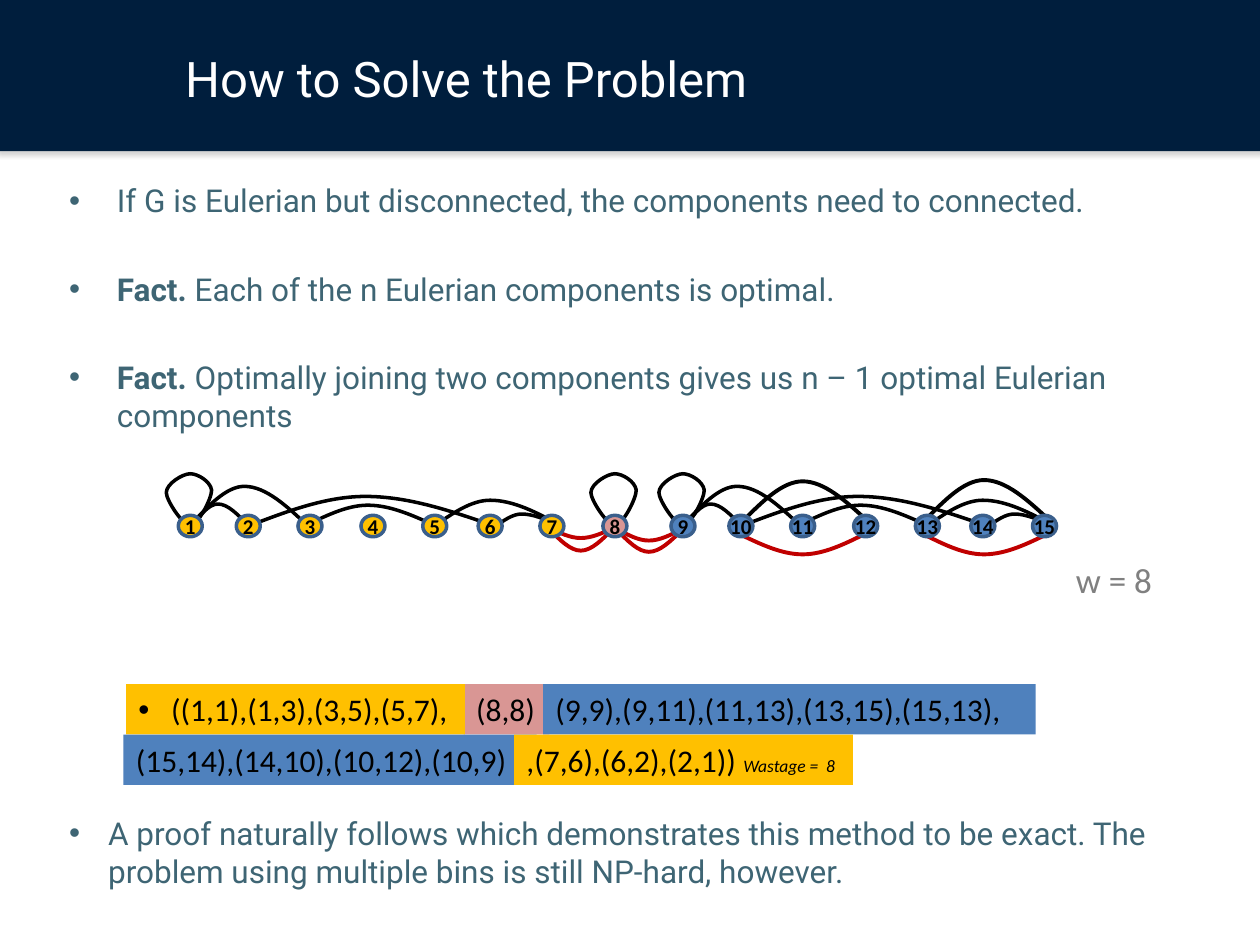
from lxml import etree
from pptx import Presentation
from pptx.dml.color import RGBColor
from pptx.enum.shapes import MSO_SHAPE
from pptx.enum.text import MSO_ANCHOR, PP_ALIGN
from pptx.oxml import parse_xml
from pptx.oxml.ns import nsdecls, qn
from pptx.util import Inches, Pt

RECTANGLE, ELLIPSE = MSO_SHAPE.RECTANGLE, MSO_SHAPE.OVAL
TOP, MIDDLE = MSO_ANCHOR.TOP, MSO_ANCHOR.MIDDLE
LEFT, CENTER = PP_ALIGN.LEFT, PP_ALIGN.CENTER

NAVY = RGBColor(0x00, 0x1E, 0x3D)
TEAL = RGBColor(0x3E, 0x65, 0x74)
GRAY = RGBColor(0x80, 0x80, 0x80)
WHITE = RGBColor(0xFF, 0xFF, 0xFF)
BLACK = RGBColor(0x00, 0x00, 0x00)
RED = RGBColor(0xC0, 0x00, 0x00)
YELLOW = RGBColor(0xFF, 0xC0, 0x00)
PINK = RGBColor(0xD9, 0x96, 0x94)
BLUE = RGBColor(0x4F, 0x81, 0xBD)
NODE_LINE = RGBColor(0x3A, 0x5F, 0x8C)

NODE_TOP = 4.09
NODE_SIZE = (0.19, 0.17)
COMPONENT_SHIFT = 3.91  # from nodes 1-7 to nodes 9-15
NODE_X = [1.51, 1.97, 2.46, 2.96, 3.45, 3.89, 4.38]
NODE_8_X = 4.88

# start x, start y, peak x, peak y, end x, end y
COMPONENT_ARCS = [
    (1.51, 4.19, 1.73, 4.00, 1.97, 4.17),
    (1.51, 4.17, 1.94, 3.86, 2.45, 4.18),
    (1.96, 4.18, 2.90, 3.94, 3.94, 4.18),
    (2.45, 4.16, 2.92, 4.01, 3.45, 4.17),
    (3.44, 4.18, 3.89, 3.97, 4.45, 4.17),
    (3.93, 4.18, 4.14, 4.08, 4.43, 4.17),
]
RIGHT_ARCS = [
    (5.89, 4.14, 6.37, 3.82, 6.88, 4.13),
    (7.34, 4.13, 7.81, 3.81, 8.33, 4.13),
]
RED_ARCS = [
    (4.90, 4.20, 5.15, 4.29, 5.41, 4.20),
    (4.90, 4.21, 5.15, 4.38, 5.41, 4.21),
    (4.36, 4.20, 4.61, 4.37, 4.87, 4.19),
    (4.36, 4.19, 4.61, 4.27, 4.87, 4.19),
    (5.87, 4.24, 6.37, 4.40, 6.88, 4.23),
    (7.31, 4.23, 7.81, 4.40, 8.33, 4.23),
]
# Bezier segments of a self-loop, relative to its lowest point
LOOP = [
    [(-0.06, 0), (-0.19, -0.20), (-0.19, -0.26)],
    [(-0.19, -0.33), (-0.06, -0.41), (0, -0.41)],
    [(0.06, -0.41), (0.16, -0.35), (0.17, -0.28)],
    [(0.17, -0.21), (0.06, 0), (0, 0)],
]
FACTS = [
    [("If G is Eulerian but disconnected, the components need to connected.", False)],
    [("Fact. ", True), ("Each of the n Eulerian components is optimal.", False)],
    [("Fact. ", True),
     ("Optimally joining two components gives us n – 1 optimal Eulerian components", False)],
]
PROOF = ("A proof naturally follows which demonstrates this method to be exact. "
         "The problem using multiple bins is still NP-hard, however.")


def add_curve(slide, start, segments, color, width, close=False):
    """Lay lines through the anchors, then turn each line into a Bezier segment."""
    anchors = [(Inches(x), Inches(y)) for x, y in [start] + [s[-1] for s in segments]]
    builder = slide.shapes.build_freeform(*anchors[0])
    builder.add_line_segments(anchors[1:], close=close)
    curve = builder.convert_to_shape()
    lines = list(curve._element.iter(qn("a:lnTo")))
    for line, segment in zip(lines, segments):
        bezier = etree.Element(qn("a:cubicBezTo"))
        for x, y in segment:
            point = etree.SubElement(bezier, qn("a:pt"))
            point.set("x", str(Inches(x) - curve.left))
            point.set("y", str(Inches(y) - curve.top))
        line.getparent().replace(line, bezier)
    curve.shadow.inherit = False
    curve.fill.background()
    curve.line.color.rgb = color
    curve.line.width = Pt(width)


def add_arc(slide, arc, color, width, shift=0):
    """Two Bezier halves that meet flat at the peak."""
    x1, y1, middle, peak, x2, y2 = arc
    x1, middle, x2 = x1 + shift, middle + shift, x2 + shift
    rise, fall = (middle - x1) / 3, (x2 - middle) / 3
    add_curve(slide, (x1, y1), [
        [(x1 + rise, (y1 + peak) / 2), (middle - rise, peak), (middle, peak)],
        [(middle + fall, peak), (x2 - fall, (y2 + peak) / 2), (x2, y2)],
    ], color, width)


def add_loop(slide, x):
    bottom = 4.17
    segments = [[(x + dx, bottom + dy) for dx, dy in segment] for segment in LOOP]
    add_curve(slide, (x, bottom), segments, BLACK, 2, close=True)


def add_filled(slide, kind, box, fill):
    shape = slide.shapes.add_shape(kind, *map(Inches, box))
    shape.shadow.inherit = False
    shape.fill.solid()
    shape.fill.fore_color.rgb = fill
    shape.line.fill.background()
    return shape


def set_font(font, name, size, color, bold=None):
    font.name, font.size, font.bold = name, Pt(size), bold
    font.color.rgb = color


def set_bullet(paragraph, indent):
    properties = paragraph._p.get_or_add_pPr()
    properties.set("marL", str(Inches(indent)))
    properties.set("indent", str(-Inches(indent)))
    etree.SubElement(properties, qn("a:buFont")).set("typeface", "Arial")
    etree.SubElement(properties, qn("a:buChar")).set("char", "•")


def add_text(slide, box):
    frame = slide.shapes.add_textbox(*map(Inches, box)).text_frame
    frame.word_wrap = True
    return frame


def add_node(slide, number, x, fill):
    width, height = NODE_SIZE
    node = add_filled(slide, ELLIPSE, (x - width / 2, NODE_TOP, width, height), fill)
    node.line.color.rgb = NODE_LINE
    node.line.width = Pt(2)
    frame = node.text_frame
    frame.margin_left = frame.margin_right = 0
    frame.word_wrap = False
    frame.vertical_anchor = MIDDLE
    paragraph = frame.paragraphs[0]
    paragraph.text = str(number)
    paragraph.alignment = CENTER
    set_font(paragraph.font, "Calibri", 12, BLACK, True)


def add_tour_part(slide, box, fill, text):
    frame = add_filled(slide, RECTANGLE, box, fill).text_frame
    frame.margin_right = 0
    frame.vertical_anchor = TOP
    paragraph = frame.paragraphs[0]
    paragraph.alignment = LEFT
    paragraph.add_run().text = text
    return paragraph


def add_header(slide):
    band = add_filled(slide, RECTANGLE, (-0.03, -0.01, 10.09, 1.21), NAVY)
    effects = band._element.spPr.find(qn("a:effectLst"))
    effects.append(parse_xml(
        f'<a:outerShdw {nsdecls("a")} blurRad="{Pt(3.1)}" dist="{Pt(1.8)}" dir="5400000">'
        '<a:srgbClr val="808080"><a:alpha val="35000"/></a:srgbClr></a:outerShdw>'))
    slide.shapes._spTree.insert(2, band._element)  # behind the title
    title = slide.shapes.title
    title.left, title.top, title.width, title.height = map(Inches, (1.37, 0, 7.07, 1.23))
    title.text_frame.text = "How to Solve the Problem"
    title.text_frame.vertical_anchor = MIDDLE
    paragraph = title.text_frame.paragraphs[0]
    paragraph.alignment = LEFT
    set_font(paragraph.font, "Roboto", 28, WHITE)


def add_facts(slide):
    frame = add_text(slide, (0.45, 1.39, 8.73, 5.43))
    for index, runs in enumerate(FACTS):
        paragraph = frame.add_paragraph() if index else frame.paragraphs[0]
        if index:
            paragraph.space_before = Pt(28.8)
        set_bullet(paragraph, 0.38)
        set_font(paragraph.font, "Roboto", 18, TEAL)
        for text, bold in runs:
            run = paragraph.add_run()
            run.text, run.font.bold = text, bold


def add_graph(slide):
    for arc in RED_ARCS:
        add_arc(slide, arc, RED, 2.25)
    for arc in RIGHT_ARCS:
        add_arc(slide, arc, BLACK, 2.25)
    for first, shift, fill in ((9, COMPONENT_SHIFT, BLUE), (1, 0, YELLOW)):
        add_loop(slide, NODE_X[0] + shift)
        for arc in COMPONENT_ARCS:
            add_arc(slide, arc, BLACK, 2, shift)
        for number, x in enumerate(NODE_X, first):
            add_node(slide, number, x + shift, fill)
    add_loop(slide, NODE_8_X)
    add_node(slide, 8, NODE_8_X, PINK)


def add_tour(slide):
    row_1, row_2, height = 5.43, 5.83, 0.4
    parts = [add_tour_part(slide, (left, top, width, height), fill, text)
             for left, top, width, fill, text in (
                 (3.68, row_1, 0.68, PINK, "(8,8)"),
                 (4.31, row_1, 3.91, BLUE, "(9,9),(9,11),(11,13),(13,15),(15,13),"),
                 (1, row_1, 2.69, YELLOW, "((1,1),(1,3),(3,5),(5,7),"),
                 (0.98, row_2, 3.28, BLUE, "(15,14),(14,10),(10,12),(10,9)"),
                 (4.08, row_2, 2.69, YELLOW, ",(7,6),(6,2),(2,1)) "))]
    set_bullet(parts[2], 0.26)
    for paragraph in parts:
        set_font(paragraph.font, "Calibri", 18, BLACK)
    wastage = parts[-1].add_run()
    wastage.text = "Wastage =  8"
    wastage.font.size, wastage.font.italic = Pt(10), True


def add_remarks(slide):
    weight = add_text(slide, (8.44, 4.38, 0.83, 0.47)).paragraphs[0]
    weight.text = "w = 8"
    set_font(weight.font, "Calibri", 20, GRAY)
    proof = add_text(slide, (0.45, 6.41, 8.86, 0.71)).paragraphs[0]
    proof.text = PROOF
    set_bullet(proof, 0.31)
    set_font(proof.font, "Roboto", 18, TEAL)


def main():
    presentation = Presentation()
    presentation.slide_width, presentation.slide_height = Inches(10), Inches(7.5)
    slide = presentation.slides.add_slide(presentation.slide_layouts[5])
    for add_part in (add_header, add_facts, add_graph, add_tour, add_remarks):
        add_part(slide)
    presentation.save("out.pptx")


if __name__ == "__main__":
    main()
